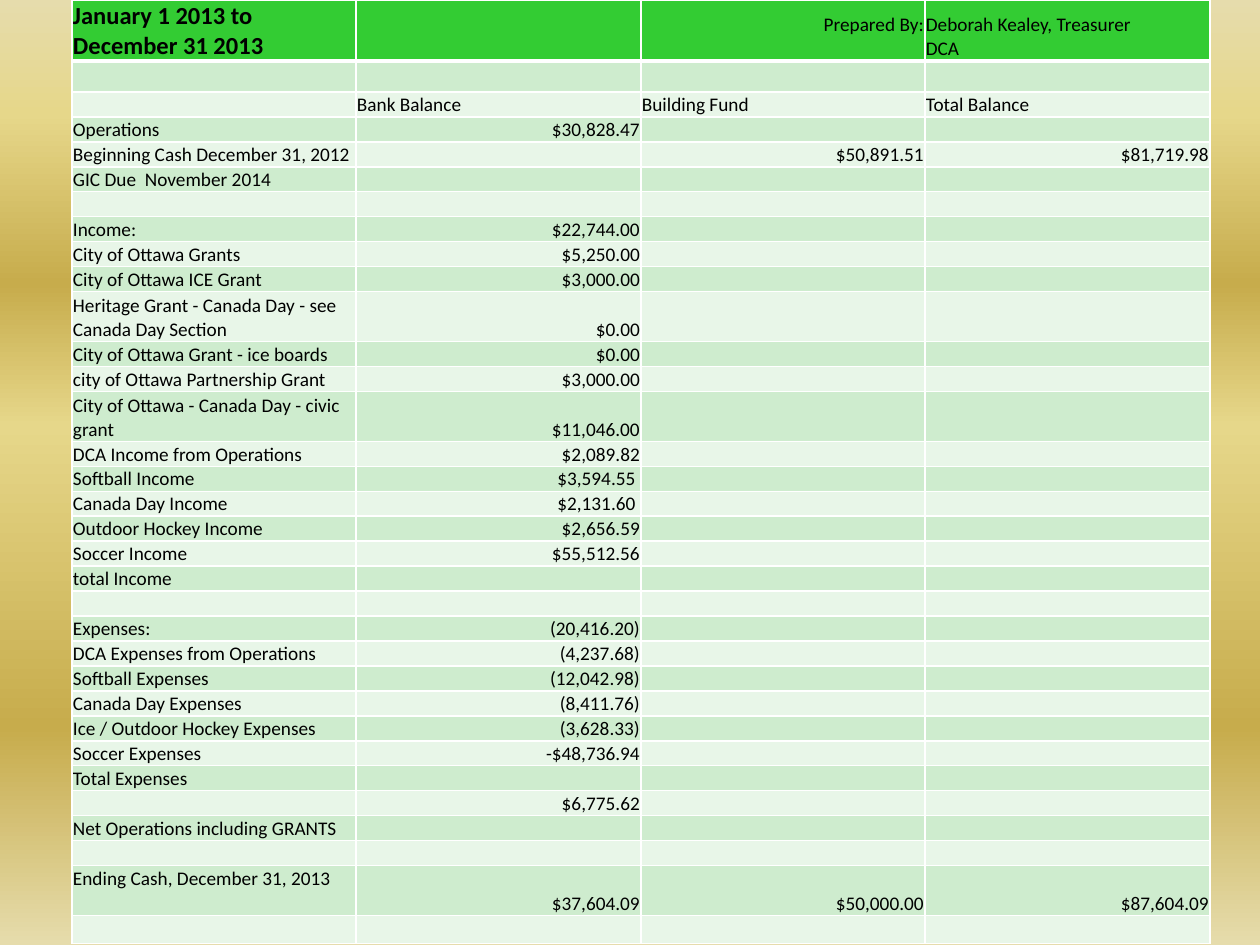
from pptx import Presentation
from pptx.dml.color import RGBColor
from pptx.enum.text import MSO_ANCHOR as Anchor, PP_ALIGN as Align
from pptx.oxml import parse_xml
from pptx.oxml.ns import nsdecls, qn
from pptx.util import Pt

PX = 914400 // 126


def color(code):
    return RGBColor.from_string(code)


def border(cell, side, width):
    cell._tc.get_or_add_tcPr().append(parse_xml(
        f'<a:{side} {nsdecls("a")} w="{Pt(width)}"><a:solidFill>'
        f'<a:srgbClr val="FFFFFF"/></a:solidFill></a:{side}>'))


deck = Presentation()
deck.slide_width = 1260 * PX
deck.slide_height = 945 * PX
slide = deck.slides.add_slide(deck.slide_layouts[6])

back = slide.background.fill
back.gradient()
back.gradient_angle = 270
stops = slide._element.find(".//" + qn("a:gsLst"))
for stop in list(stops):
    stops.remove(stop)
for pos, code in [(0, "E6DCAC"), (12, "E6D78A"), (30, "C7AC4C"),
                  (45, "E6D78A"), (77, "C7AC4C"), (100, "E6DCAC")]:
    stops.append(parse_xml(
        f'<a:gs {nsdecls("a")} pos="{pos * 1000}"><a:srgbClr val="{code}"/></a:gs>'))

rows = [
    ["January 1 2013 to December 31 2013", "", "Prepared By:",
     "Deborah Kealey, Treasurer\nDCA"],
    [],
    ["", "Bank Balance", "Building Fund", "Total Balance"],
    ["Operations", "$30,828.47"],
    ["Beginning Cash December 31, 2012", "", "$50,891.51", "$81,719.98"],
    ["GIC Due  November 2014"],
    [],
    ["Income:", "$22,744.00"],
    ["City of Ottawa Grants", "$5,250.00"],
    ["City of Ottawa ICE Grant", "$3,000.00"],
    ["Heritage Grant - Canada Day - see Canada Day Section", "$0.00"],
    ["City of Ottawa Grant - ice boards", "$0.00"],
    ["city of Ottawa Partnership Grant", "$3,000.00"],
    ["City of Ottawa - Canada Day - civic grant", "$11,046.00"],
    ["DCA Income from Operations", "$2,089.82"],
    ["Softball Income", "$3,594.55 "],
    ["Canada Day Income", "$2,131.60 "],
    ["Outdoor Hockey Income", "$2,656.59"],
    ["Soccer Income", "$55,512.56"],
    ["total Income"],
    [],
    ["Expenses:", "(20,416.20)"],
    ["DCA Expenses from Operations", "(4,237.68)"],
    ["Softball Expenses", "(12,042.98)"],
    ["Canada Day Expenses", "(8,411.76)"],
    ["Ice / Outdoor Hockey Expenses", "(3,628.33)"],
    ["Soccer Expenses", "-$48,736.94"],
    ["Total Expenses"],
    ["", "$6,775.62"],
    ["Net Operations including GRANTS"],
    [],
    ["Ending Cash, December 31, 2013", "$37,604.09", "$50,000.00", "$87,604.09"],
    [],
]
last = len(rows) - 1
tall = {0: 61, 1: 31, 10: 50, 13: 50, last - 1: 50, last: 28}
highs = [tall.get(r, 25) for r in range(len(rows))]
wides = [284, 285, 284, 285]

frame = slide.shapes.add_table(len(rows), 4, 72 * PX, 0,
                               sum(wides) * PX, sum(highs) * PX)
table = frame.table
table.first_row = False
table.horz_banding = False
for col, wide in zip(table.columns, wides):
    col.width = wide * PX

for r, row in enumerate(rows):
    table.rows[r].height = highs[r] * PX
    shade = "33CC33" if r == 0 else ("CEECCE", "E8F6E8")[(r + 1) % 2]
    for c in range(4):
        cell = table.cell(r, c)
        text = row[c] if c < len(row) else ""
        cell.text_frame.text = text
        cell.margin_left = cell.margin_right = cell.margin_top = PX
        cell.margin_bottom = 0
        cell.vertical_anchor = Anchor.BOTTOM
        for side in ("lnL", "lnR", "lnT", "lnB"):
            thick = (r, side) in [(0, "lnB"), (1, "lnT")]
            border(cell, side, 3 if thick else 1)
        cell.fill.solid()
        cell.fill.fore_color.rgb = color(shade)
        number = text[-1:].isdigit() or text.endswith((")", " ", ":"))
        for para in cell.text_frame.paragraphs:
            if c and number:
                para.alignment = Align.RIGHT
            if not text:
                para._p.get_or_add_endParaRPr().set("sz", "1100")
            for run in para.runs:
                run.font.name = "Calibri"
                run.font.size = Pt(14 if (r, c) == (0, 0) else 11)
                run.font.bold = (r, c) == (0, 0)
                run.font.color.rgb = color("000000")

table.cell(0, 2).margin_bottom = 24 * PX
table.cell(last - 1, 0).vertical_anchor = Anchor.TOP

deck.save("out.pptx")
